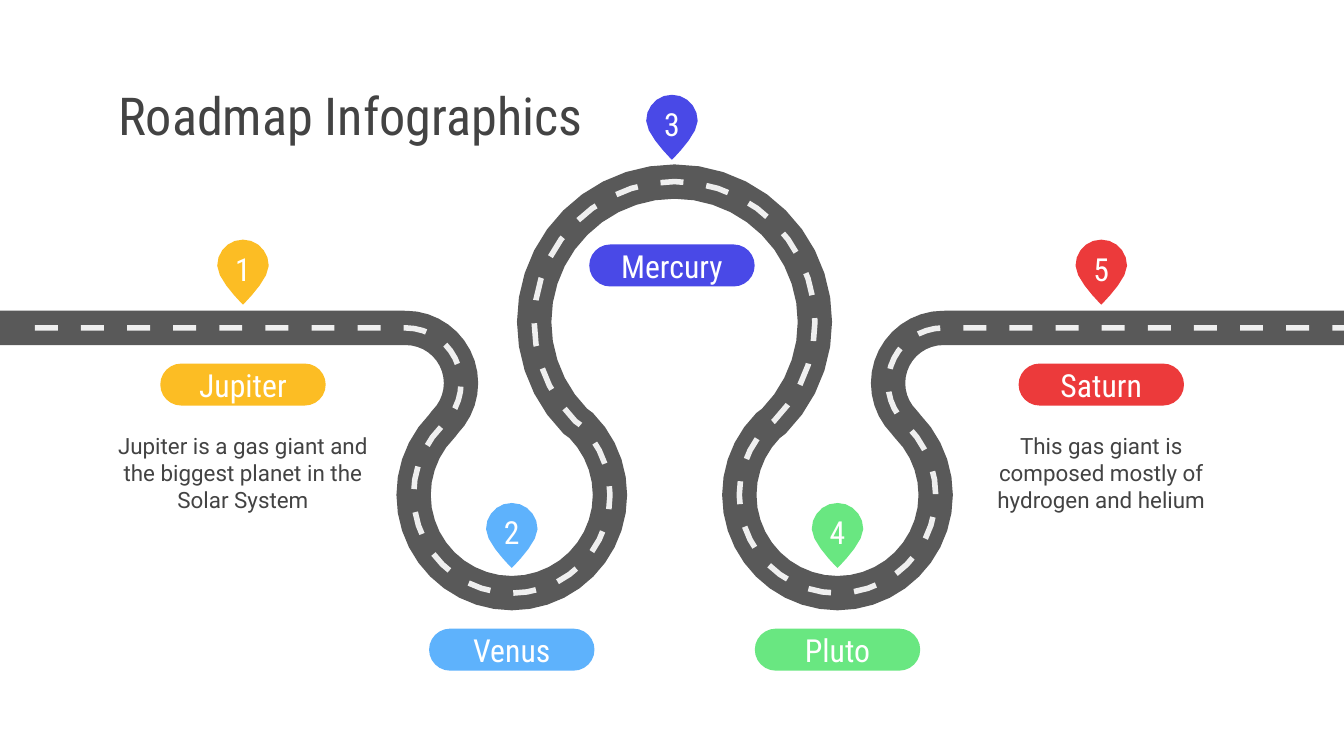
import math

from pptx import Presentation
from pptx.dml.color import RGBColor
from pptx.enum import shapes, text
from pptx.util import Pt

WIDTH, HEIGHT = 720, 405
COLORS = {
    "ink": "434343", "road": "595959", "dash": "EFEFEF", "white": "FFFFFF",
    "yellow": "FCBD24", "blue": "5EB2FC", "indigo": "4949E7",
    "green": "69E781", "red": "EC3A3B",
}
HEADING, BODY = "Roboto Condensed", "Roboto"

TITLE = "Roadmap Infographics"
# name, colour, centre x, pin top, pill top, description
STOPS = [
    ("Jupiter", "yellow", 130.2, 128.4, 194.8,
     "Jupiter is a gas giant and the biggest planet in the Solar System"),
    ("Venus", "blue", 274.2, 269.5, 336.8, None),
    ("Mercury", "indigo", 360, 50.8, 131, None),
    ("Pluto", "green", 448.7, 269.5, 336.8, None),
    ("Saturn", "red", 590, 128.4, 194.8,
     "This gas giant is composed mostly of hydrogen and helium"),
]

# The road's centre line: centre x, centre y, radius, first and last angle
ROAD_Y = 175.7
BENDS = [
    (217.4, 205.3, 29.6, -90, 45),
    (274.2, 265.2, 52.6, 225, -45),
    (361.4, 172.5, 75.2, 135, 405),
    (448.7, 265.2, 52.6, 225, -45),
    (505.4, 205.3, 29.6, 135, 270),
]
BEND_STEP = 9
ROAD_HALF, DASH_HALF = 9.2, 1.5
DASH_START, DASH_LENGTH, DASH_PERIOD = 18.7, 12.3, 24.7

PILL_W, PILL_H = 88.6, 22.5
PIN_HALF, PIN_SHOULDER, PIN_H = 13.8, 14, 34.8
NOTE_W, NOTE_H, NOTE_TOP = 148.3, 56, 224.6


def rgb(name):
    return RGBColor.from_string(COLORS[name])


def centre_line():
    points = [(0, ROAD_Y)]
    for x, y, radius, first, last in BENDS:
        step = BEND_STEP if last > first else -BEND_STEP
        for angle in range(first, last + step, step):
            turn = math.radians(angle)
            points.append((x + radius * math.cos(turn), y + radius * math.sin(turn)))
    return points + [(WIDTH, ROAD_Y)]


LINE = centre_line()
MARKS = [0]
for here, there in zip(LINE, LINE[1:]):
    MARKS.append(MARKS[-1] + math.dist(here, there))
LENGTH = MARKS[-1]


def point_at(distance):
    """Point on the centre line this far from the road's left end."""
    distance = min(max(distance, 0), LENGTH)
    i = next(n for n in range(1, len(MARKS)) if MARKS[n] >= distance)
    share = (distance - MARKS[i - 1]) / (MARKS[i] - MARKS[i - 1])
    return tuple(a + share * (b - a) for a, b in zip(LINE[i - 1], LINE[i]))


def ribbon(start, end, half):
    """Closed outline of a strip that follows the centre line."""
    left, right = [], []
    for distance in [start, *(m for m in MARKS if start < m < end), end]:
        x, y = point_at(distance)
        (x1, y1), (x2, y2) = point_at(distance - 1), point_at(distance + 1)
        size = math.dist((x1, y1), (x2, y2))
        dx, dy = half * (y2 - y1) / size, half * (x1 - x2) / size
        left.append((x + dx, y + dy))
        right.append((x - dx, y - dy))
    return left + right[::-1]


def curve(a, b, c, d, steps=5):
    """Points of a cubic Bezier curve, without the first one."""
    for i in range(1, steps + 1):
        t = i / steps
        s = 1 - t
        yield tuple(s**3 * p + 3 * s * s * t * q + 3 * s * t * t * r + t**3 * v
                    for p, q, r, v in zip(a, b, c, d))


def pin_outline(x, top):
    shoulder, tip = (PIN_HALF, PIN_SHOULDER), (0, PIN_H)
    side = [
        (0, 0),
        *curve((0, 0), (7.6, 0), (PIN_HALF, 6.2), shoulder),
        *curve(shoulder, (PIN_HALF, 21.5), tip, tip),
    ]
    mirrored = [(-dx, dy) for dx, dy in side[-2:0:-1]]
    return [(x + dx, top + dy) for dx, dy in side + mirrored]


def paint(shape, color):
    shape.shadow.inherit = False
    shape.fill.solid()
    shape.fill.fore_color.rgb = rgb(color)
    shape.line.fill.background()
    return shape


def add_outlines(page, outlines, color):
    """Draw closed outlines as one filled freeform."""
    builder = None
    for outline in outlines:
        points = [(Pt(x), Pt(y)) for x, y in outline]
        if builder is None:
            builder = page.shapes.build_freeform(*points[0])
        else:
            builder.move_to(*points[0])
        builder.add_line_segments(points[1:], close=True)
    return paint(builder.convert_to_shape(), color)


def write(shape, words, size, font, color, align=text.PP_ALIGN.CENTER,
          anchor=text.MSO_ANCHOR.MIDDLE, bottom=7.2):
    frame = shape.text_frame
    frame.word_wrap = True
    frame.vertical_anchor = anchor
    frame.margin_left = frame.margin_right = frame.margin_top = Pt(7.2)
    frame.margin_bottom = Pt(bottom)
    para = frame.paragraphs[0]
    para.alignment = align
    span = para.add_run()
    span.text = words
    span.font.size = Pt(size)
    span.font.name = font
    span.font.color.rgb = rgb(color)


def add_stop(page, number, name, color, x, pin_top, pill_top, note):
    pill = page.shapes.add_shape(
        shapes.MSO_SHAPE.ROUNDED_RECTANGLE,
        Pt(x - PILL_W / 2), Pt(pill_top), Pt(PILL_W), Pt(PILL_H))
    pill.adjustments[0] = 0.5
    write(paint(pill, color), name, 17, HEADING, "white")
    pin = add_outlines(page, [pin_outline(x, pin_top)], color)
    write(pin, str(number), 17, HEADING, "white", bottom=10.8)
    if note:
        box = page.shapes.add_textbox(
            Pt(x - NOTE_W / 2), Pt(NOTE_TOP), Pt(NOTE_W), Pt(NOTE_H))
        write(box, note, 12, BODY, "ink", anchor=text.MSO_ANCHOR.TOP)


def main():
    deck = Presentation()
    deck.slide_width, deck.slide_height = Pt(WIDTH), Pt(HEIGHT)
    page = deck.slides.add_slide(deck.slide_layouts[6])

    title = page.shapes.add_textbox(Pt(56.2), Pt(42.5), Pt(608.4), Pt(38.2))
    write(title, TITLE, 28, HEADING, "ink", align=text.PP_ALIGN.LEFT)

    add_outlines(page, [ribbon(0, LENGTH, ROAD_HALF)], "road")
    count = math.ceil((LENGTH - DASH_START) / DASH_PERIOD)
    starts = [DASH_START + DASH_PERIOD * i for i in range(count)]
    dashes = [ribbon(s, min(s + DASH_LENGTH, LENGTH), DASH_HALF) for s in starts]
    add_outlines(page, dashes, "dash")

    for number, stop in enumerate(STOPS, 1):
        add_stop(page, number, *stop)
    deck.save("out.pptx")


if __name__ == "__main__":
    main()
